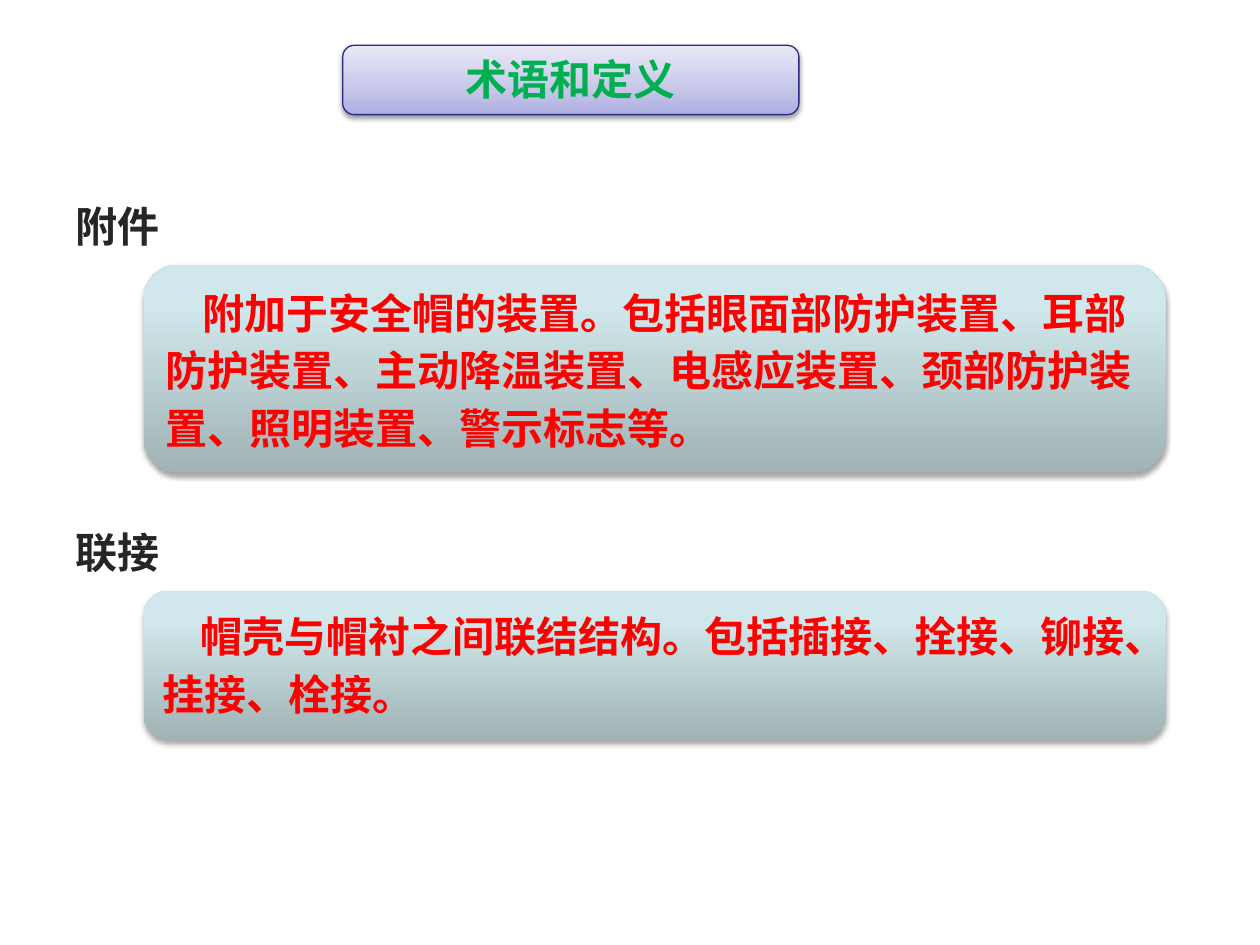
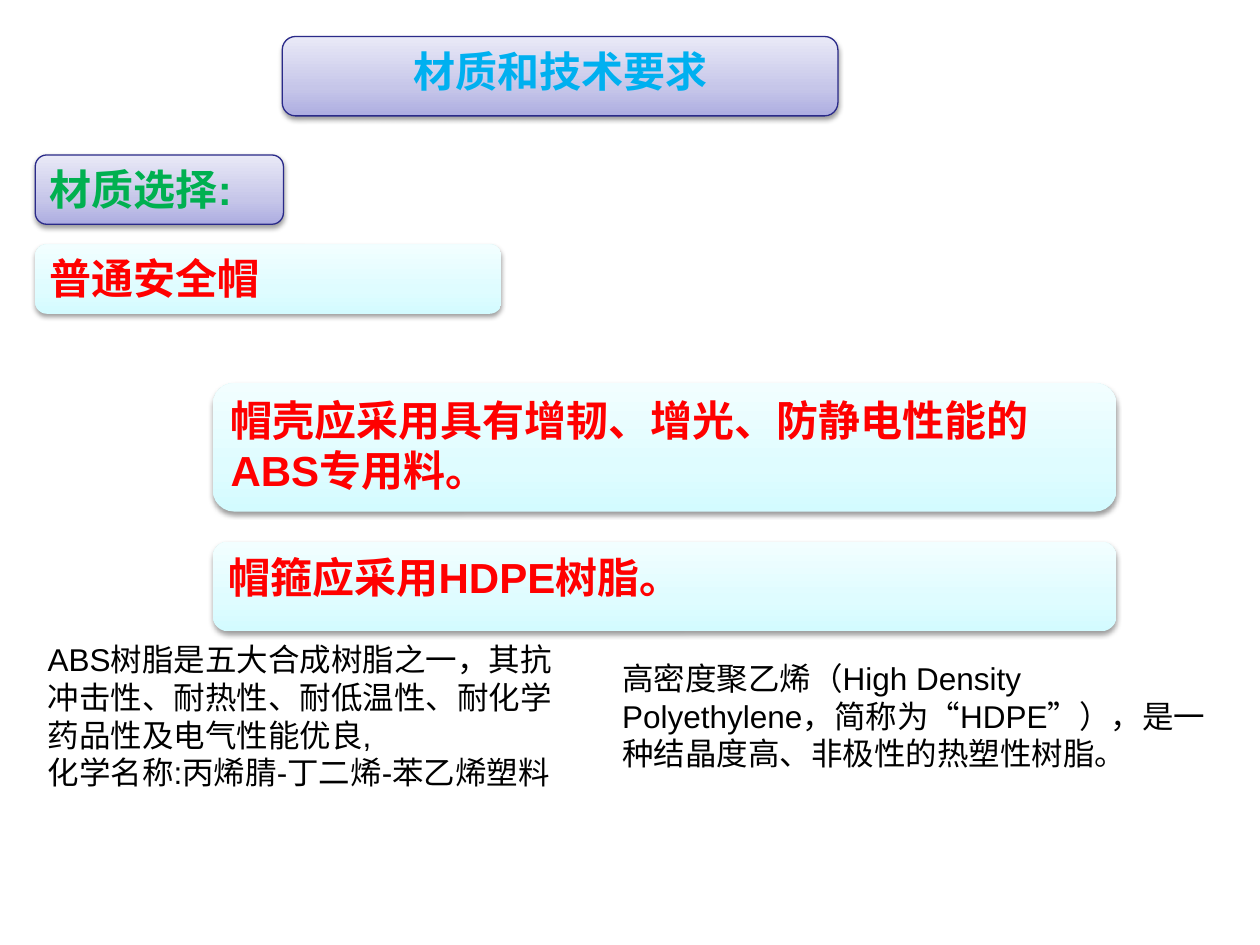
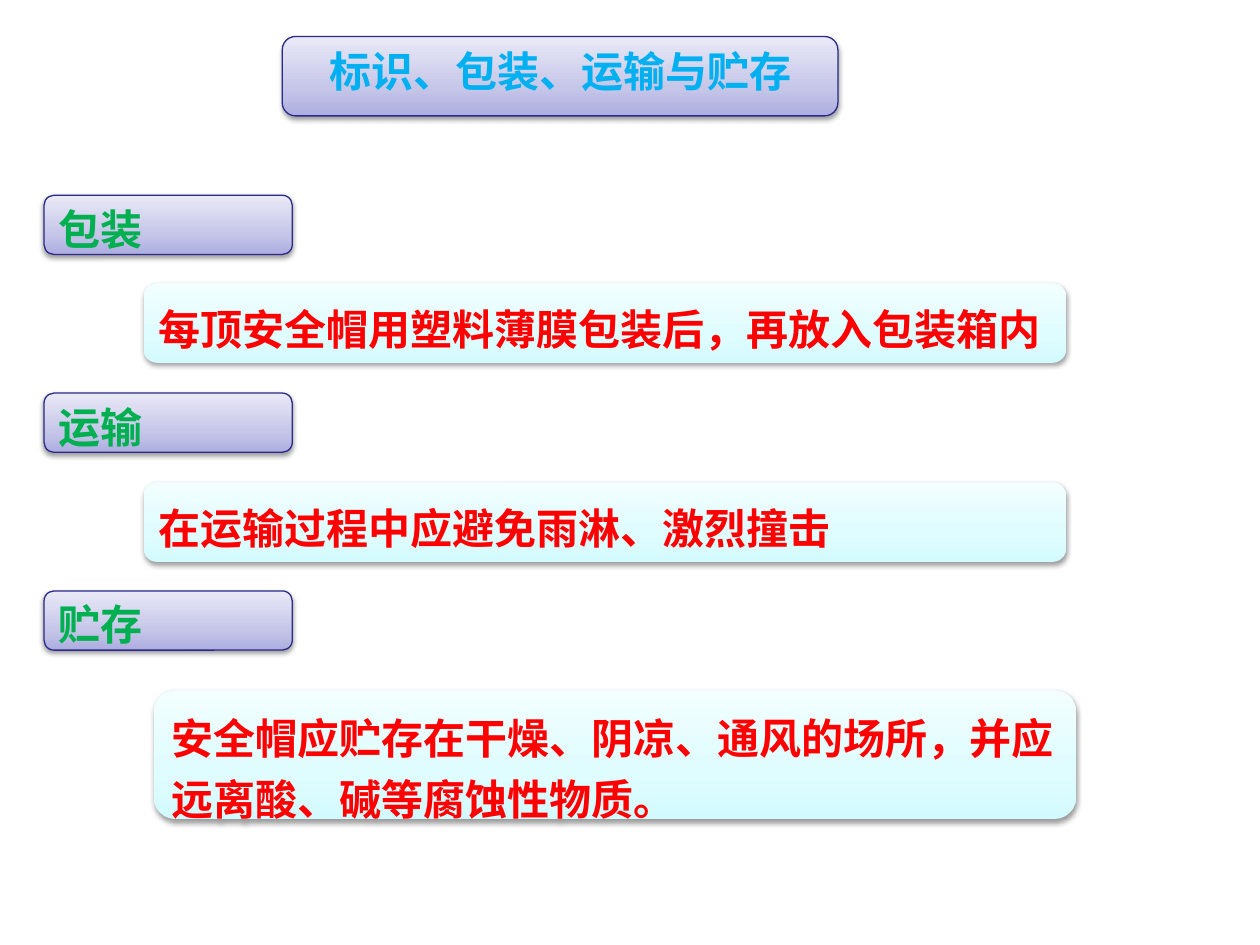
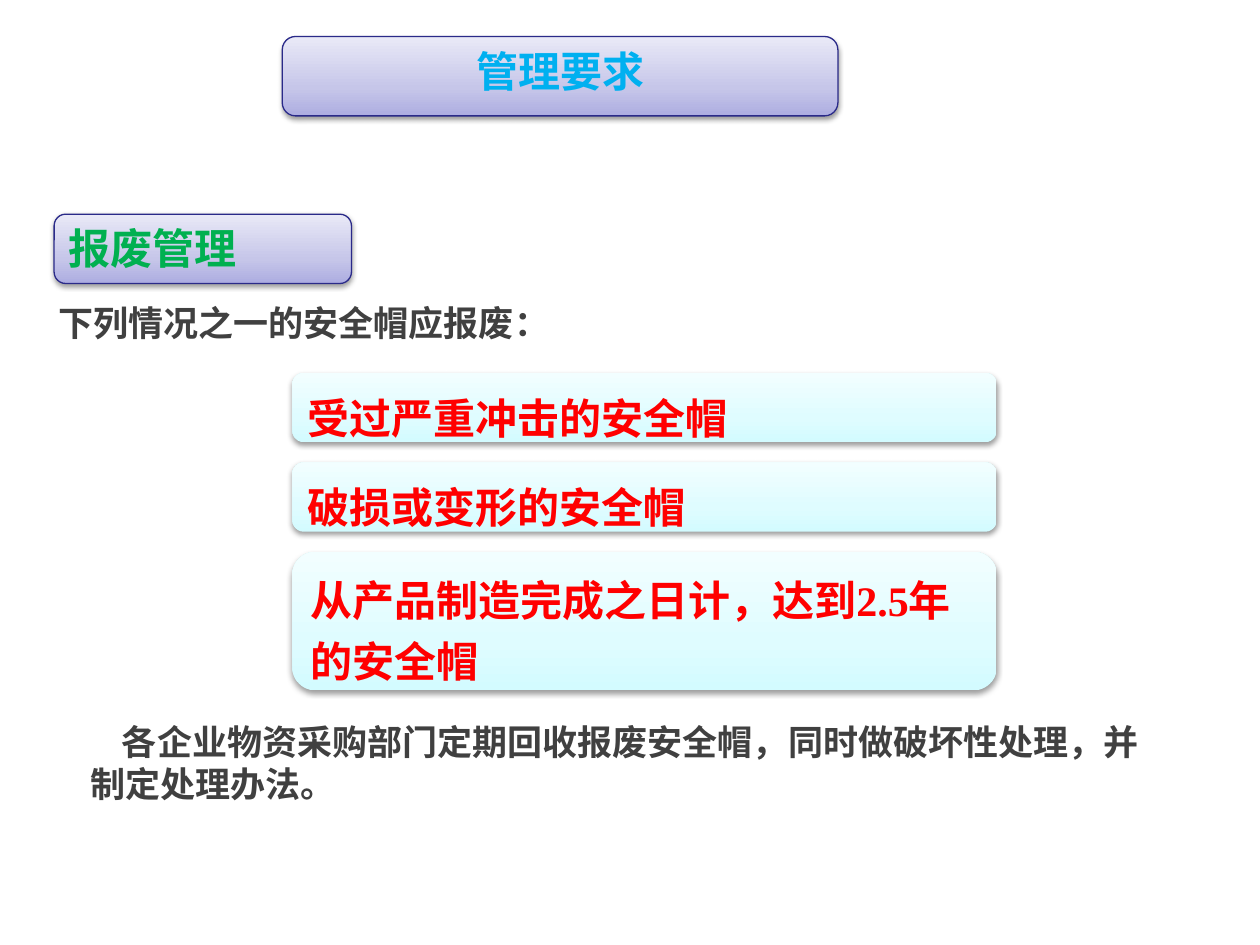
from dataclasses import dataclass

from lxml.etree import SubElement
from pptx import Presentation
from pptx.dml.color import RGBColor
from pptx.enum.shapes import MSO_SHAPE as Shape
from pptx.enum.text import MSO_ANCHOR as Anchor, MSO_AUTO_SIZE as AutoSize, PP_ALIGN as Align
from pptx.oxml.ns import qn
from pptx.util import Inches, Pt


@dataclass(frozen=True)
class Theme:
    # Colours
    title: str = "00B0F0"
    tag: str = "00B050"
    card: str = "FF0000"
    heading: str = "262626"
    remark: str = "404040"
    body: str = "000000"
    white: str = "FFFFFF"
    outline: str = "2A2A89"
    # Gradients run from the bottom edge upwards: (percent, colour)
    lilac: tuple = ((0, "ADADE1"), (35, "C6C6E9"), (100, "E9E9F7"))
    aqua: tuple = ((0, "D3FBFF"), (35, "DFFCFF"), (100, "F2FEFF"))
    slate: tuple = ((0, "A0B3B5"), (80, "D0E8EB"), (100, "D1EAEC"))
    # Shadows: opacity in percent, blur and distance in points
    shadow: tuple = (38, 3.1, 1.6)
    slate_shadow: tuple = (35, 3.1, 1.8)
    # Type
    latin: str = "Arial"
    serif: str = "Times New Roman"
    cjk: str = "Noto Sans CJK SC"
    large: int = 24
    medium: int = 20
    small: int = 18
    indent_em: float = 0.9


class SlideBuilder:
    def __init__(self, deck, theme):
        self.deck = deck
        self.theme = theme
        self.page = None

    def new_page(self):
        self.page = self.deck.slides.add_slide(self.deck.slide_layouts[6])

    # Shared building blocks
    def set_text(self, frame, texts, size, colour, bold=True, font=None,
                 align=Align.LEFT, spacing=None, indent=False):
        frame.word_wrap = True
        frame.vertical_anchor = Anchor.TOP
        for index, text in enumerate(texts):
            para = frame.paragraphs[0] if index == 0 else frame.add_paragraph()
            para.text = text
            para.alignment = align
            if spacing:
                para.line_spacing = Pt(spacing)
            properties = para._p.get_or_add_pPr()
            if indent:
                properties.set("indent", str(Pt(self.theme.indent_em * size)))
            para.font.name = font or self.theme.latin
            para.font.size = Pt(size)
            para.font.bold = bold
            para.font.color.rgb = RGBColor.from_string(colour)
            SubElement(properties.find(qn("a:defRPr")), qn("a:ea"), typeface=self.theme.cjk)

    def box(self, place, text, colour, shape=Shape.ROUNDED_RECTANGLE, size=None, **style):
        box = self.page.shapes.add_shape(shape, *map(Inches, place))
        box.shadow.inherit = False
        frame = box.text_frame
        frame.margin_left = frame.margin_right = Inches(0.09)
        frame.margin_top = frame.margin_bottom = Inches(0.04)
        self.set_text(frame, [text], size or self.theme.large, colour, **style)
        return box

    def paint_gradient(self, box, stops):
        box.fill.gradient()
        box.fill.gradient_angle = 90
        stop_list = box._element.spPr.find(".//" + qn("a:gsLst"))
        stop_list.clear()
        for percent, colour in stops:
            stop = SubElement(stop_list, qn("a:gs"), pos=str(percent * 1000))
            SubElement(stop, qn("a:srgbClr"), val=colour)

    def cast_shadow(self, box, shadow):
        opacity, blur, distance = shadow
        effects = box._element.spPr.find(qn("a:effectLst"))
        outer = SubElement(effects, qn("a:outerShdw"), blurRad=str(Pt(blur)),
                           dist=str(Pt(distance)), dir="5400000", rotWithShape="0")
        black = SubElement(outer, qn("a:srgbClr"), val="000000")
        SubElement(black, qn("a:alpha"), val=str(opacity * 1000))

    # Kinds of element
    def plate(self, place, text, colour, **style):
        box = self.box(place, text, colour, **style)
        self.paint_gradient(box, self.theme.lilac)
        box.line.color.rgb = RGBColor.from_string(self.theme.outline)
        box.line.width = Pt(0.75)
        self.cast_shadow(box, self.theme.shadow)

    def title(self, text, place=(2.24, 0.29, 4.41, 0.63), colour=None):
        self.plate(place, text, colour or self.theme.title, align=Align.CENTER)

    def tag(self, place, text):
        self.plate(place, text, self.theme.tag)

    def card(self, place, text, stops=None, shadow=None, **style):
        box = self.box(place, text, self.theme.card, **style)
        self.paint_gradient(box, stops or self.theme.aqua)
        box.line.fill.background()
        self.cast_shadow(box, shadow or self.theme.shadow)

    def definition(self, place, text):
        self.card(place, text, self.theme.slate, self.theme.slate_shadow,
                  spacing=33, indent=True)

    def white_box(self, place, text, colour, **style):
        box = self.box(place, text, colour, **style)
        box.fill.solid()
        box.fill.fore_color.rgb = RGBColor.from_string(self.theme.white)
        box.line.color.rgb = RGBColor.from_string(self.theme.white)
        box.line.width = Pt(2)

    def heading(self, place, text):
        self.white_box(place, text, self.theme.heading, shape=Shape.RECTANGLE,
                       font=self.theme.cjk)

    def remark(self, place, text, **style):
        self.white_box(place, text, self.theme.remark, size=self.theme.medium, **style)

    def note(self, place, *texts):
        box = self.page.shapes.add_textbox(*map(Inches, place))
        self.set_text(box.text_frame, texts, self.theme.small, self.theme.body, bold=False)
        box.text_frame.auto_size = AutoSize.SHAPE_TO_FIT_TEXT


def add_terms(builder):
    builder.new_page()
    builder.title("术语和定义", (2.72, 0.36, 3.62, 0.55), builder.theme.tag)
    terms = [
        (1.55, 1.65, "附件", "附加于安全帽的装置。包括眼面部防护装置、耳部防护装置、"
                             "主动降温装置、电感应装置、颈部防护装置、照明装置、警示标志等。"),
        (4.14, 1.18, "联接", "帽壳与帽衬之间联结结构。包括插接、拴接、铆接、挂接、栓接。"),
    ]
    for top, height, term, meaning in terms:
        builder.heading((0.51, top, 1.42, 0.47), term)
        builder.definition((1.14, top + 0.55, 8.11, height), meaning)


def add_materials(builder):
    builder.new_page()
    builder.title("材质和技术要求")
    builder.tag((0.28, 1.23, 1.97, 0.55), "材质选择:")
    builder.card((0.28, 1.94, 3.7, 0.55), "普通安全帽")
    builder.card((1.69, 3.04, 7.17, 1.02), "帽壳应采用具有增韧、增光、防静电性能的ABS专用料。")
    builder.card((1.69, 4.3, 7.17, 0.71), "帽箍应采用HDPE树脂。")
    builder.note((0.28, 5.03, 4.21, 1.31),
                 "ABS树脂是五大合成树脂之一，其抗冲击性、耐热性、耐低温性、耐化学药品性及电气性能优良,",
                 "化学名称:丙烯腈-丁二烯-苯乙烯塑料")
    builder.note((4.84, 5.18, 5, 1.01),
                 "高密度聚乙烯（High Density Polyethylene，简称为“HDPE”），"
                 "是一种结晶度高、非极性的热塑性树脂。")


def add_handling(builder):
    builder.new_page()
    builder.title("标识、包装、运输与贮存")
    steps = [
        ("包装", (1.14, 2.25, 7.32, 0.63), "每顶安全帽用塑料薄膜包装后，再放入包装箱内"),
        ("运输", (1.14, 3.83, 7.32, 0.63), "在运输过程中应避免雨淋、激烈撞击"),
        ("贮存", (1.22, 5.48, 7.32, 1.02),
         "安全帽应贮存在干燥、阴凉、通风的场所，并应远离酸、碱等腐蚀性物质。"),
    ]
    for index, (step, place, rule) in enumerate(steps):
        builder.tag((0.35, 1.55 + 1.57 * index, 1.97, 0.47), step)
        builder.card(place, rule, spacing=35)


def add_management(builder):
    builder.new_page()
    builder.title("管理要求")
    builder.tag((0.43, 1.7, 2.36, 0.55), "报废管理")
    builder.remark((0.35, 2.33, 4.96, 0.47), "下列情况之一的安全帽应报废：")
    cases = [
        (0.55, "受过严重冲击的安全帽", builder.theme.latin),
        (0.55, "破损或变形的安全帽", builder.theme.latin),
        (1.1, "从产品制造完成之日计，达到2.5年的安全帽", builder.theme.serif),
    ]
    for index, (height, case, font) in enumerate(cases):
        builder.card((2.32, 2.96 + 0.71 * index, 5.59, height), case, font=font, spacing=35)
    builder.remark((0.59, 5.64, 8.74, 0.79),
                   "各企业物资采购部门定期回收报废安全帽，同时做破坏性处理，并制定处理办法。",
                   indent=True)


def main():
    deck = Presentation()
    deck.slide_width, deck.slide_height = Inches(10), Inches(7.5)
    builder = SlideBuilder(deck, Theme())
    for add_page in (add_terms, add_materials, add_handling, add_management):
        add_page(builder)
    deck.save("out.pptx")


if __name__ == "__main__":
    main()
